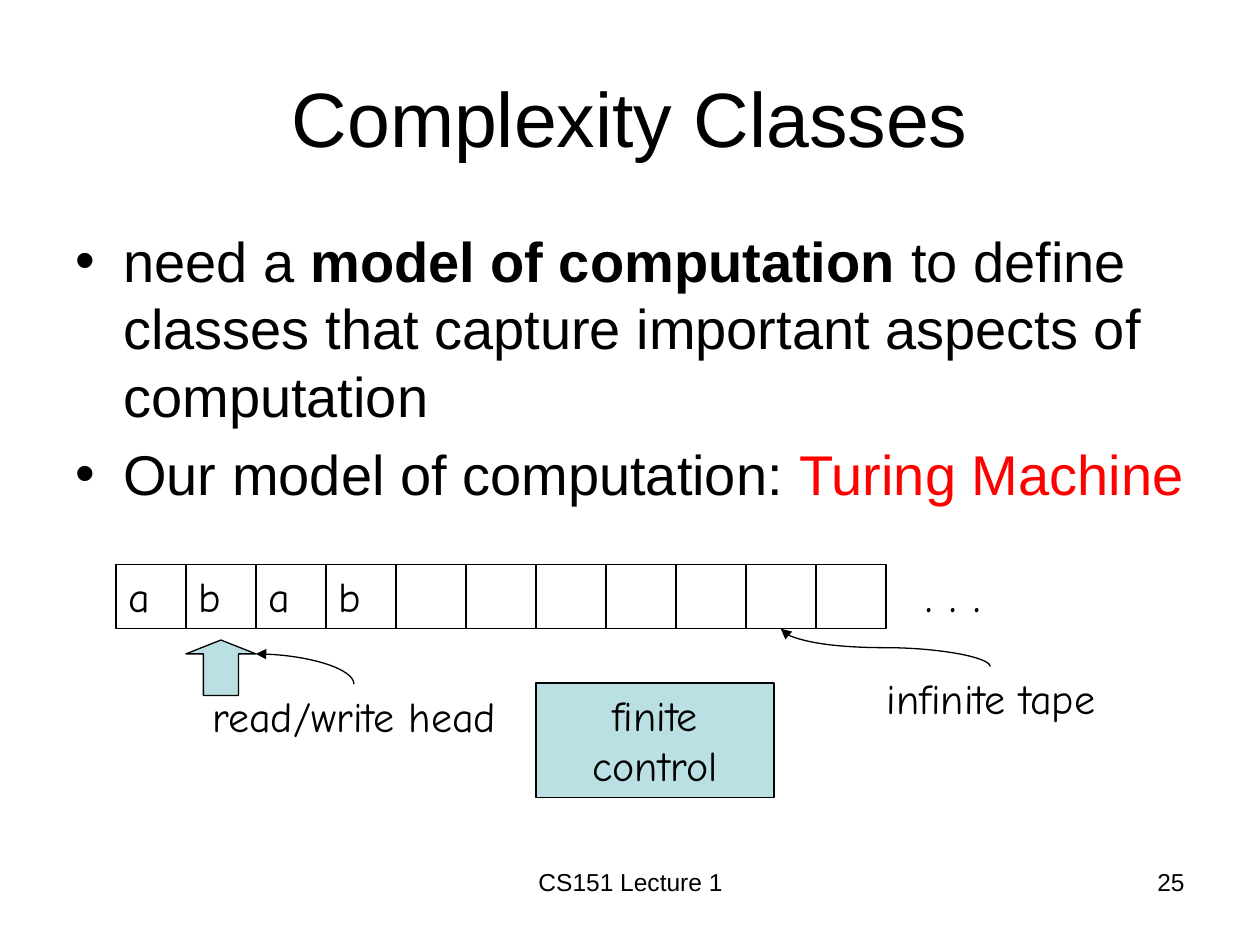
"""Build the slide that introduces the Turing machine as a model of computation."""
from lxml import etree
from pptx import Presentation
from pptx.dml.color import RGBColor
from pptx.enum.shapes import MSO_CONNECTOR, MSO_SHAPE
from pptx.enum.text import MSO_ANCHOR, PP_ALIGN
from pptx.oxml.ns import qn
from pptx.util import Inches, Pt

BLACK = RGBColor(0, 0, 0)
RED = RGBColor(255, 0, 0)
BLUE = RGBColor(0xBB, 0xE0, 0xE3)
LEFT, MID, RIGHT = PP_ALIGN.LEFT, PP_ALIGN.CENTER, PP_ALIGN.RIGHT
TOP, CENTER = MSO_ANCHOR.TOP, MSO_ANCHOR.MIDDLE
RECT, ARROW = MSO_SHAPE.RECTANGLE, MSO_SHAPE.UP_ARROW
CURVE = MSO_CONNECTOR.CURVE
SANS, COMIC = "Arial", "Comic Neue"

TITLE = "Complexity Classes"
POINTS = [
    [("need a ", False, BLACK), ("model of computation", True, BLACK),
     (" to define classes that capture important aspects of computation", False, BLACK)],
    [("Our model of computation: ", False, BLACK), ("Turing Machine", False, RED)],
]
TAPE = ["a", "b", "a", "b"] + [""] * 7
STEP = 5 / 9
TAPE_X, TAPE_Y, TAPE_H = 0.92, 4.48, 0.51
HEAD_X = TAPE_X + STEP
LABELS = [
    (". . .", (7.25, 4.42, 2.11, 0.57), LEFT, 28, COMIC),
    ("infinite tape", (6.92, 5.29, 1.89, 0.9), MID, 24, COMIC),
    ("read/write head", (HEAD_X, 5.43, 2.67, 0.9), MID, 24, COMIC),
    ("CS151 Lecture 1", (3.42, 6.83, 3.17, 0.52), MID, 14, SANS),
    ("25", (7.17, 6.83, 2.33, 0.52), RIGHT, 14, SANS),
]
LINKS = [
    ((7.86, 5.29), (TAPE_X + 9.5 * STEP, TAPE_Y + TAPE_H), "curvedConnector3"),
    ((2.81, 5.43), (HEAD_X + STEP, 5.19), "curvedConnector2"),
]


def add_run(para, text, size, font, color=BLACK, bold=False):
    run = para.add_run()
    run.text = text
    run.font.size, run.font.name = Pt(size), font
    run.font.bold, run.font.color.rgb = bold, color


def write(shape, text, align, size, font, anchor=TOP):
    frame = shape.text_frame
    frame.word_wrap, frame.vertical_anchor = True, anchor
    para = frame.paragraphs[0]
    para.alignment = align
    add_run(para, text, size, font)


def add_box(slide, kind, area, fill=None, text="", align=LEFT):
    box = slide.shapes.add_shape(kind, *map(Inches, area))
    box.shadow.inherit = False
    if fill is None:
        box.fill.background()
    else:
        box.fill.solid()
        box.fill.fore_color.rgb = fill
    box.line.color.rgb, box.line.width = BLACK, Pt(0.75)
    if text:
        write(box, text, align, 24, COMIC)
    return box


def add_points(slide):
    box = slide.shapes.add_textbox(*map(Inches, (0.5, 1.75, 9, 4.95)))
    frame = box.text_frame
    frame.word_wrap = True
    for i, runs in enumerate(POINTS):
        para = frame.add_paragraph() if i else frame.paragraphs[0]
        props = para._p.get_or_add_pPr()
        props.set("marL", str(Inches(0.38)))
        props.set("indent", str(-Inches(0.38)))
        space = etree.SubElement(props, qn("a:spcBef"))
        etree.SubElement(space, qn("a:spcPct")).set("val", "20000")
        etree.SubElement(props, qn("a:buFont")).set("typeface", SANS)
        etree.SubElement(props, qn("a:buChar")).set("char", "•")
        for text, bold, color in runs:
            add_run(para, text, 32, SANS, color, bold)


def add_link(slide, start, end, kind):
    mid_x, mid_y = ((a + b) / 2 for a, b in zip(start, end))
    half_x, half_y = (abs(a - b) / 2 for a, b in zip(start, end))
    ends = (mid_x + half_y, mid_y - half_x, mid_x - half_y, mid_y + half_x)
    link = slide.shapes.add_connector(CURVE, *map(Inches, ends))
    link.line.color.rgb, link.line.width = BLACK, Pt(0.75)
    props = link._element.spPr
    props.find(qn("a:xfrm")).set("rot", "5400000")
    props.find(qn("a:prstGeom")).set("prst", kind)
    etree.SubElement(props.find(qn("a:ln")), qn("a:tailEnd")).set("type", "triangle")
    etree.SubElement(props, qn("a:effectLst"))


def main():
    deck = Presentation()
    deck.slide_width, deck.slide_height = Inches(10), Inches(7.5)
    slide = deck.slides.add_slide(deck.slide_layouts[5])
    title = slide.shapes.title
    title.left, title.top, title.width, title.height = map(Inches, (0.5, 0.3, 9, 1.25))
    write(title, TITLE, MID, 44, SANS, CENTER)
    add_points(slide)
    for i, mark in enumerate(TAPE):
        add_box(slide, RECT, (TAPE_X + i * STEP, TAPE_Y, STEP, TAPE_H), text=mark)
    head = add_box(slide, ARROW, (HEAD_X, 5.08, STEP, 0.44), BLUE)
    head.adjustments[0], head.adjustments[1] = 0.5, 0.25
    add_box(slide, RECT, (TAPE_X + 6 * STEP, 5.42, 1.89, 0.91), BLUE, "finite control", MID)
    for text, area, *style in LABELS:
        write(slide.shapes.add_textbox(*map(Inches, area)), text, *style)
    for link in LINKS:
        add_link(slide, *link)
    deck.save("out.pptx")


if __name__ == "__main__":
    main()
